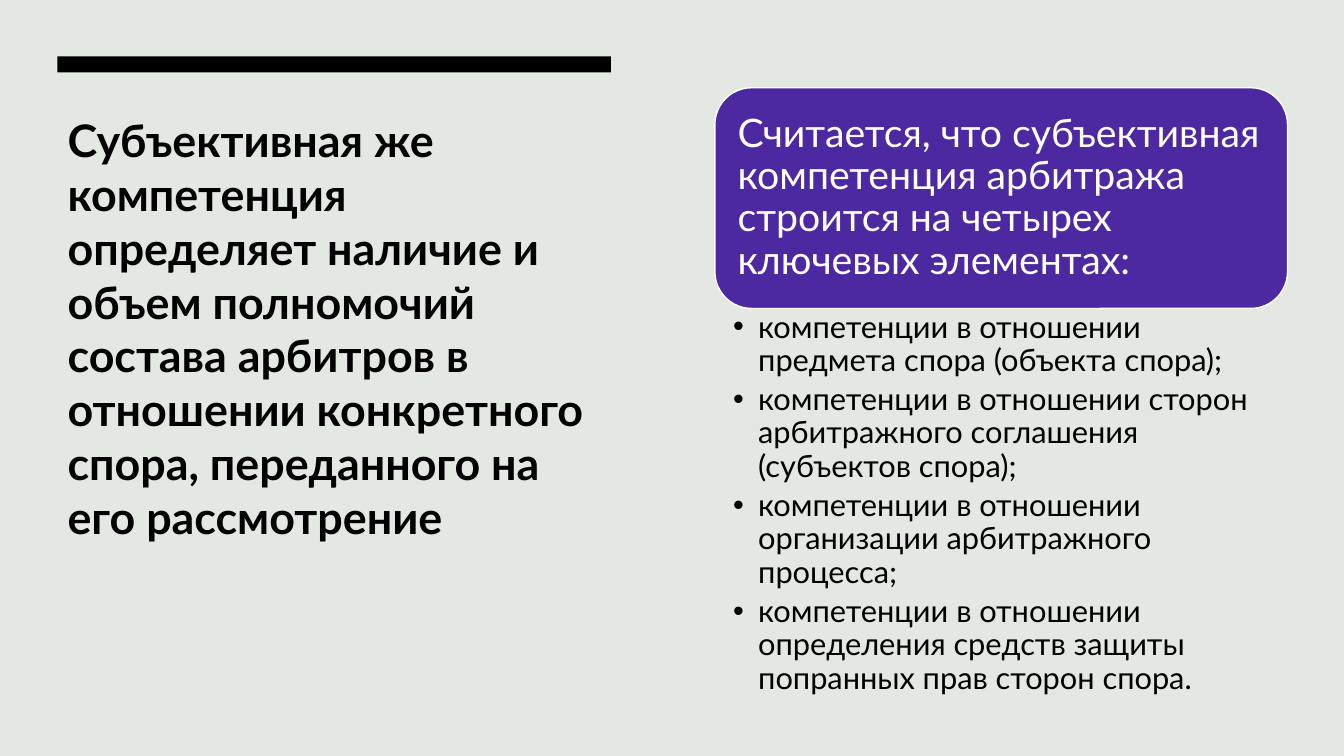
from lxml import etree
from pptx import Presentation
from pptx.dml.color import RGBColor
from pptx.enum.shapes import MSO_SHAPE
from pptx.enum.text import MSO_ANCHOR, MSO_AUTO_SIZE, PP_ALIGN
from pptx.oxml.ns import qn
from pptx.util import Inches, Pt

RECT = MSO_SHAPE.RECTANGLE
ROUND = MSO_SHAPE.ROUNDED_RECTANGLE
TOP = MSO_ANCHOR.TOP
MIDDLE = MSO_ANCHOR.MIDDLE
LEFT = PP_ALIGN.LEFT
FIXED = MSO_AUTO_SIZE.NONE

PAPER = RGBColor(0xE4, 0xE8, 0xE2)
BLACK = RGBColor(0, 0, 0)
WHITE = RGBColor(0xFF, 0xFF, 0xFF)
PURPLE = RGBColor(0x4D, 0x29, 0xA1)

TITLE = ("Субъективная же компетенция определяет наличие и объем полномочий "
         "состава арбитров в отношении конкретного спора, переданного на его "
         "рассмотрение")
LEAD = ("Считается, что субъективная компетенция арбитража строится на "
        "четырех ключевых элементах:")
ITEMS = [
    "компетенции в отношении предмета спора (объекта спора);",
    "компетенции в отношении сторон арбитражного соглашения "
    "(субъектов спора);",
    "компетенции в отношении организации арбитражного процесса;",
    "компетенции в отношении определения средств защиты попранных прав "
    "сторон спора.",
]


def apply(target, values):
    for name, value in values.items():
        setattr(target, name, value)


def place(shape, box):
    names = ("left", "top", "width", "height")
    apply(shape, dict(zip(names, map(Inches, box))))


def write(shape, lines, font, para, pads, anchor):
    frame = shape.text_frame
    frame.text = "\n".join(lines)
    names = ("margin_left", "margin_top", "margin_right", "margin_bottom")
    apply(frame, dict(zip(names, map(Inches, pads))))
    apply(frame, {"word_wrap": True, "auto_size": FIXED,
                  "vertical_anchor": anchor})
    for item in frame.paragraphs:
        apply(item, {"alignment": LEFT, "space_before": Pt(0), **para})
        for run in item.runs:
            apply(run.font, {"name": "Lato", **font})
            run.font.color.rgb = WHITE if anchor == MIDDLE else BLACK


def bullet(item):
    props = item._p.get_or_add_pPr()
    apply_indent = {"marL": Inches(0.25), "indent": Inches(-0.25)}
    for name, value in apply_indent.items():
        props.set(name, str(value))
    etree.SubElement(props, qn("a:buFont")).set("typeface", "Arial")
    etree.SubElement(props, qn("a:buChar")).set("char", "•")


def block(slide, kind, box, fill):
    shape = slide.shapes.add_shape(kind, *map(Inches, box))
    shape.shadow.inherit = False
    shape.fill.solid()
    shape.fill.fore_color.rgb = fill
    shape.line.fill.background()
    return shape


def card(slide):
    shape = block(slide, ROUND, (7.09, 0.87, 5.68, 2.19), PURPLE)
    shape.line.color.rgb = WHITE
    shape.line.width = Pt(1)
    write(shape, [LEAD], {"size": Pt(28)},
          {"line_spacing": 0.9, "space_after": Pt(9.8)}, [0.12] * 4, MIDDLE)


def title(slide):
    shape = slide.shapes.title
    place(shape, (0.57, 1.07, 5.49, 5.33))
    write(shape, [TITLE], {"size": Pt(32), "bold": True},
          {"line_spacing": 1.0}, (0.1, 0.05, 0.1, 0.05), TOP)


def points(slide):
    shape = slide.placeholders[1]
    place(shape, (7.09, 3.05, 5.68, 3.68))
    write(shape, ITEMS, {"size": Pt(22)},
          {"line_spacing": 0.9, "space_after": Pt(4.4)},
          (0.18, 0.04, 0.22, 0.04), TOP)
    for item in shape.text_frame.paragraphs:
        bullet(item)


def main():
    deck = Presentation()
    apply(deck, {"slide_width": Inches(13.33), "slide_height": Inches(7.5)})
    slide = deck.slides.add_slide(deck.slide_layouts[1])
    slide.background.fill.solid()
    slide.background.fill.fore_color.rgb = PAPER
    block(slide, RECT, (0.57, 0.56, 5.49, 0.16), BLACK)
    title(slide)
    card(slide)
    points(slide)
    deck.save("out.pptx")


if __name__ == "__main__":
    main()
